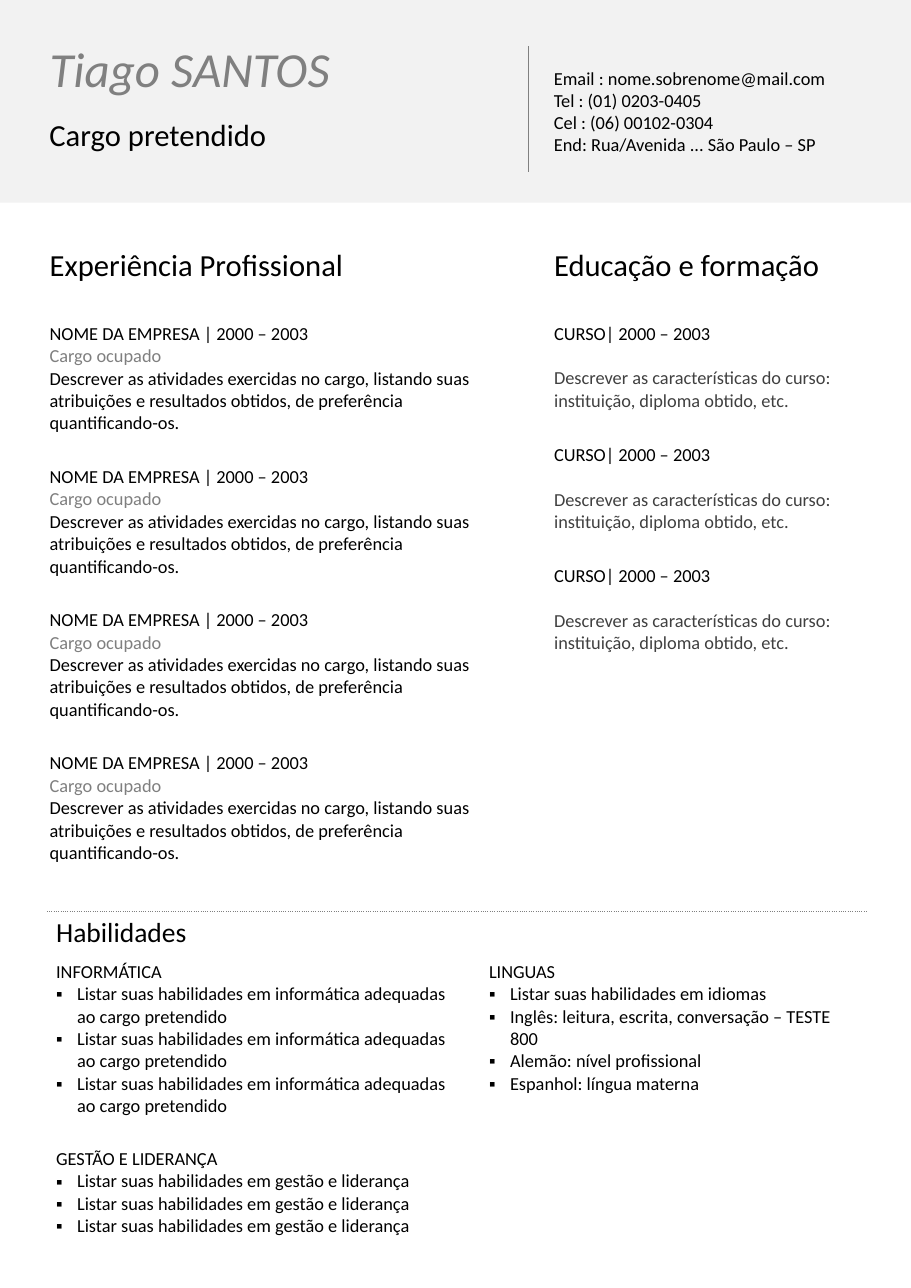
from dataclasses import dataclass

from lxml.etree import SubElement
from pptx import Presentation
from pptx.dml.color import RGBColor
from pptx.enum.shapes import MSO_CONNECTOR, MSO_SHAPE
from pptx.enum.text import MSO_ANCHOR, MSO_AUTO_SIZE, PP_ALIGN
from pptx.oxml import parse_xml
from pptx.oxml.ns import nsdecls, qn
from pptx.table import Table, _Cell
from pptx.text.text import TextFrame
from pptx.util import Emu, Pt

EMU_PER_PX = 9144  # 100 px to the inch
FONT = "Calibri"
BULLET_FONT = "Arial"
COLORS = {
    "band": "F2F2F2",
    "ink": "000000",
    "rule": "808080",
    "name": "808080",
    "role": "7F7F7F",
    "course": "404040",
}
CELL_MARGIN = 5
BULLET_INDENT = 19


@dataclass(frozen=True)
class Line:
    text: str
    size: int = 12
    color: str = "ink"
    italic: bool = False
    bullet: bool = False
    gap_after: float = 0


@dataclass(frozen=True)
class Grid:
    left: int
    top: int
    columns: list[int]
    row_heights: list[int]
    rows: list[list[list[Line]]]


def px(length: int) -> Emu:
    return Emu(length * EMU_PER_PX)


def rgb(name: str) -> RGBColor:
    return RGBColor.from_string(COLORS[name])


def write(frame: TextFrame, lines: list[Line]) -> None:
    for index, line in enumerate(lines):
        paragraph = frame.paragraphs[0] if index == 0 else frame.add_paragraph()
        if line.bullet:
            properties = paragraph._p.get_or_add_pPr()
            properties.set("marL", str(px(BULLET_INDENT)))
            properties.set("indent", str(-px(BULLET_INDENT)))
            SubElement(properties, qn("a:buFont")).set("typeface", BULLET_FONT)
            SubElement(properties, qn("a:buChar")).set("char", "▪")
        paragraph.alignment = PP_ALIGN.LEFT
        if line.gap_after:
            paragraph.space_after = Pt(line.gap_after)
        run = paragraph.add_run()
        run.text = line.text
        run.font.name = FONT
        run.font.size = Pt(line.size)
        run.font.italic = line.italic
        run.font.color.rgb = rgb(line.color)


def add_text(shapes, left: int, top: int, width: int, height: int,
             lines: list[Line], wrap: bool) -> None:
    frame = shapes.add_textbox(px(left), px(top), px(width), px(height)).text_frame
    frame.word_wrap = wrap
    frame.auto_size = MSO_AUTO_SIZE.SHAPE_TO_FIT_TEXT
    write(frame, lines)


def fill_cell(cell: _Cell, lines: list[Line]) -> None:
    cell.fill.background()
    cell.margin_top = cell.margin_bottom = px(CELL_MARGIN)
    cell.vertical_anchor = MSO_ANCHOR.TOP
    if lines:
        write(cell.text_frame, lines)
    else:
        # A small end mark keeps the empty row from growing
        SubElement(cell.text_frame.paragraphs[0]._p, qn("a:endParaRPr")).set("sz", "800")


def add_grid(shapes, grid: Grid) -> Table:
    table = shapes.add_table(
        len(grid.rows), len(grid.columns), px(grid.left), px(grid.top),
        px(sum(grid.columns)), px(sum(grid.row_heights))).table
    table.first_row = table.horz_banding = False
    for column, width in zip(table.columns, grid.columns):
        column.width = px(width)
    for r, (height, cells) in enumerate(zip(grid.row_heights, grid.rows)):
        table.rows[r].height = px(height)
        for c, lines in enumerate(cells):
            fill_cell(table.cell(r, c), lines)
    return table


def dot_top(cell: _Cell) -> None:
    cell._tc.get_or_add_tcPr().insert(0, parse_xml(
        f'<a:lnT {nsdecls("a")} w="12700"><a:solidFill><a:srgbClr val="{COLORS["rule"]}"/>'
        '</a:solidFill><a:prstDash val="sysDot"/></a:lnT>'))


def skill_list(heading: str, skills: list[str]) -> list[Line]:
    return [Line(heading)] + [Line(skill, bullet=True) for skill in skills]


JOB = [
    Line("NOME DA EMPRESA | 2000 – 2003"),
    Line("Cargo ocupado", color="role"),
    Line("Descrever as atividades exercidas no cargo, listando suas atribuições "
         "e resultados obtidos, de preferência quantificando-os."),
]
COURSE = [
    Line("CURSO| 2000 – 2003", gap_after=14.6),
    Line("Descrever as características do curso: instituição, diploma obtido, etc.",
         color="course"),
]
EXPERIENCE = Grid(35, 219, [437], [44, 25, 130, 130, 130, 110],
                  [[[Line("Experiência Profissional", 20)]], [[]]] + [[JOB]] * 4)
EDUCATION = Grid(493, 219, [301], [44, 25, 110, 110, 110, 32],
                 [[[Line("Educação e formação", 20)]], [[]]] + [[COURSE]] * 3 + [[[]]])
SKILLS = Grid(41, 827, [393, 352], [40, 170, 90], [
    [[Line("Habilidades", 18)], []],
    [skill_list("INFORMÁTICA",
                ["Listar suas habilidades em informática adequadas ao cargo pretendido"] * 3),
     skill_list("LINGUAS", ["Listar suas habilidades em idiomas",
                            "Inglês: leitura, escrita, conversação – TESTE 800",
                            "Alemão: nível profissional",
                            "Espanhol: língua materna"])],
    [skill_list("GESTÃO E LIDERANÇA",
                ["Listar suas habilidades em gestão e liderança"] * 3), []],
])
CONTACTS = [
    Line("Email : nome.sobrenome@mail.com"),
    Line("Tel : (01) 0203-0405"),
    Line("Cel : (06) 00102-0304"),
    Line("End: Rua/Avenida ... São Paulo – SP"),
]


def main() -> None:
    presentation = Presentation()
    presentation.slide_width, presentation.slide_height = px(827), px(1169)
    slide = presentation.slides.add_slide(presentation.slide_layouts[5])
    shapes = slide.shapes

    # Header band, behind the name
    band = shapes.add_shape(MSO_SHAPE.RECTANGLE, px(0), px(0), px(827), px(184))
    band.shadow.inherit = False
    band.fill.solid()
    band.fill.fore_color.rgb = rgb("band")
    band.line.fill.background()
    name = shapes.title
    name.element.addprevious(band.element)

    # Name, position and contacts
    name.left, name.top, name.width, name.height = px(35), px(30), px(277), px(64)
    name.text_frame.word_wrap = False
    name.text_frame.auto_size = MSO_AUTO_SIZE.SHAPE_TO_FIT_TEXT
    name.text_frame.vertical_anchor = MSO_ANCHOR.TOP
    write(name.text_frame, [Line("Tiago SANTOS", 32, "name", italic=True)])
    add_text(shapes, 35, 100, 219, 44, [Line("Cargo pretendido", 20)], wrap=False)
    add_text(shapes, 493, 56, 312, 91, CONTACTS, wrap=True)
    divider = shapes.add_connector(MSO_CONNECTOR.STRAIGHT, px(480), px(42), px(480), px(156))
    divider.line.color.rgb = rgb("rule")
    divider.line.width = Pt(0.75)
    SubElement(divider.element.spPr, qn("a:effectLst"))

    # Experience, education and skills
    add_grid(shapes, EXPERIENCE)
    add_grid(shapes, EDUCATION)
    skills = add_grid(shapes, SKILLS)
    for column in range(2):
        dot_top(skills.cell(0, column))
    skills.cell(0, 0).merge(skills.cell(0, 1))
    skills.cell(1, 1).merge(skills.cell(2, 1))

    presentation.save("out.pptx")


if __name__ == "__main__":
    main()
